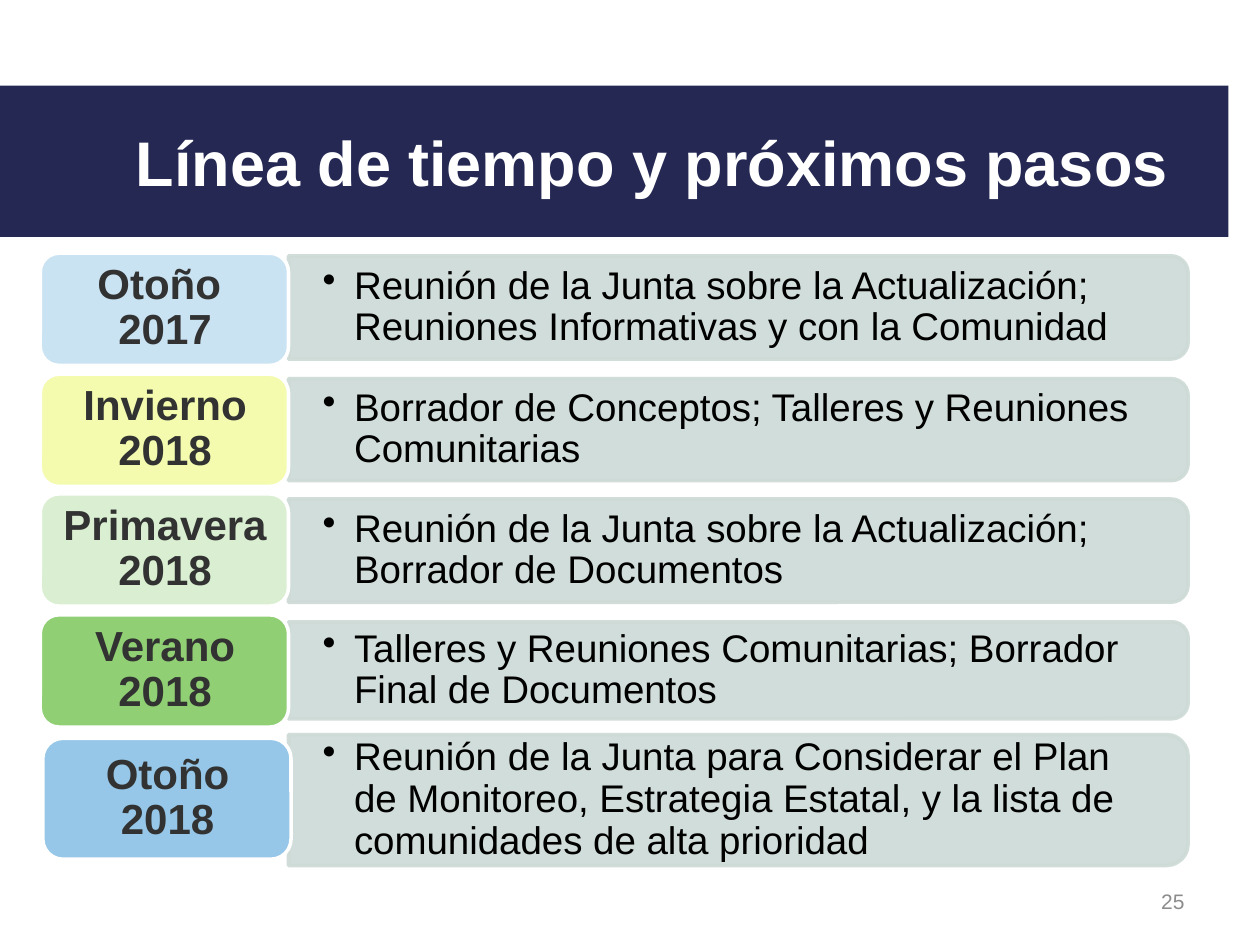
from lxml import etree
from pptx import Presentation
from pptx import util as u
from pptx.dml.color import RGBColor
from pptx.enum import shapes, text
from pptx.oxml.ns import qn

NAVY = RGBColor(0x24, 0x28, 0x52)
WHITE = RGBColor(0xFF, 0xFF, 0xFF)
BLACK = RGBColor(0, 0, 0)
GRAY = RGBColor(0x8C, 0x8C, 0x8C)
CHARCOAL = RGBColor(0x31, 0x32, 0x31)
SAGE = RGBColor(0xCD, 0xDA, 0xD6)
PALE_BLUE = RGBColor(0xCA, 0xE3, 0xF3)
YELLOW = RGBColor(0xF4, 0xFB, 0xAF)
PALE_GREEN = RGBColor(0xDA, 0xEF, 0xD1)
GREEN = RGBColor(0x90, 0xCF, 0x74)
BLUE = RGBColor(0x96, 0xC7, 0xE8)

BAR_LEFT, BAR_LENGTH = 2.29, 7.14
LABEL_WIDTH = 1.97

# season, colour, label left / top / height, bar centre / height, activity
STEPS = [
    ("Otoño \n2017", PALE_BLUE, 0.32, 2.01, 0.89, 2.44, 0.82,
     "Reunión de la Junta sobre la Actualización; Reuniones Informativas y con la Comunidad"),
    ("Invierno 2018", YELLOW, 0.32, 2.97, 0.89, 3.41, 0.81,
     "Borrador de Conceptos; Talleres y Reuniones Comunitarias"),
    ("Primavera 2018", PALE_GREEN, 0.32, 3.92, 0.89, 4.37, 0.82,
     "Reunión de la Junta sobre la Actualización; Borrador de Documentos"),
    ("Verano 2018", GREEN, 0.32, 4.88, 0.89, 5.32, 0.77,
     "Talleres y Reuniones Comunitarias; Borrador Final de Documentos"),
    ("Otoño\n2018", BLUE, 0.34, 5.86, 0.96, 6.35, 1.04,
     "Reunión de la Junta para Considerar el Plan de Monitoreo, Estrategia Estatal, "
     "y la lista de comunidades de alta prioridad"),
]


class TimelineSlide:
    font = "Arial"

    def __init__(self, slide):
        self.shapes = slide.shapes

    def add_text(self, shape, words, size, color, align, bold=False,
                 insets=(0.1, 0.05, 0.1, 0.05), spacing=None, bullet=False):
        frame = shape.text_frame
        frame.word_wrap = True
        frame.vertical_anchor = text.MSO_ANCHOR.MIDDLE
        (frame.margin_left, frame.margin_top,
         frame.margin_right, frame.margin_bottom) = map(u.Inches, insets)
        paragraph = frame.paragraphs[0]
        paragraph.alignment = align
        if spacing:
            paragraph.line_spacing = spacing
        if bullet:
            props = paragraph._p.get_or_add_pPr()
            props.set("marL", str(u.Inches(0.25)))
            props.set("indent", str(u.Inches(-0.25)))
            etree.SubElement(props, qn("a:buChar")).set("char", "•")
        for number, line in enumerate(words.split("\n")):
            if number:
                paragraph.add_line_break()
            run = paragraph.add_run()
            run.text = line
            run.font.name = self.font
            run.font.size = u.Pt(size)
            run.font.bold = bold
            run.font.color.rgb = color

    def box(self, kind, left, top, width, height, fill, line=None, parent=None):
        shape = (parent or self.shapes).add_shape(
            kind, *map(u.Inches, (left, top, width, height)))
        shape.shadow.inherit = False
        shape.fill.solid()
        shape.fill.fore_color.rgb = fill
        if line is None:
            shape.line.fill.background()
        else:
            shape.line.color.rgb = line
            shape.line.width = u.Pt(2)
        return shape

    def textbox(self, left, top, width, height, words, parent=None, **style):
        box = (parent or self.shapes).add_textbox(
            *map(u.Inches, (left, top, width, height)))
        self.add_text(box, words, **style)

    def title(self, words):
        banner = self.box(shapes.MSO_SHAPE.RECTANGLE, 0, 0.68, 9.75, 1.2, NAVY)
        self.add_text(banner, words, 36, WHITE, text.PP_ALIGN.CENTER, bold=True,
                      insets=(0.7, 0.05, 0.1, 0.05))

    def bar(self, parent, center, height, activity):
        # A quarter turn puts the rounded end on the right
        bar = self.box(shapes.MSO_SHAPE.ROUND_2_SAME_RECTANGLE,
                       BAR_LEFT + (BAR_LENGTH - height) / 2, center - BAR_LENGTH / 2,
                       height, BAR_LENGTH, SAGE, SAGE, parent)
        bar.rotation = 90
        for color in bar._element.spPr.iter(qn("a:srgbClr")):
            etree.SubElement(color, qn("a:alpha")).set("val", "90000")
        text_height = height - 0.08
        self.textbox(BAR_LEFT, center - text_height / 2, 7.1, text_height, activity,
                     parent, size=22, color=BLACK, align=text.PP_ALIGN.LEFT,
                     insets=(0.27, 0.14, 0.27, 0.14), spacing=0.9, bullet=True)

    def label(self, parent, left, top, height, season, fill):
        self.box(shapes.MSO_SHAPE.ROUNDED_RECTANGLE, left, top, LABEL_WIDTH, height,
                 fill, WHITE, parent)
        self.textbox(left + 0.05, top + 0.04, LABEL_WIDTH - 0.09, height - 0.09, season,
                     parent, size=24, color=CHARCOAL, align=text.PP_ALIGN.CENTER,
                     bold=True, spacing=0.9)


def main():
    deck = Presentation()
    deck.slide_width, deck.slide_height = u.Inches(10), u.Inches(7.5)
    page = TimelineSlide(deck.slides.add_slide(deck.slide_layouts[6]))

    # Title banner and page number
    page.title("Línea de tiempo y próximos pasos")
    page.textbox(7.17, 6.95, 2.33, 0.4, "25", size=12, color=GRAY,
                 align=text.PP_ALIGN.RIGHT)

    # Timeline rows
    timeline = page.shapes.add_group_shape().shapes
    for season, fill, left, top, height, center, bar_height, activity in STEPS:
        page.bar(timeline, center, bar_height, activity)
        page.label(timeline, left, top, height, season, fill)

    deck.save("out.pptx")


if __name__ == "__main__":
    main()
